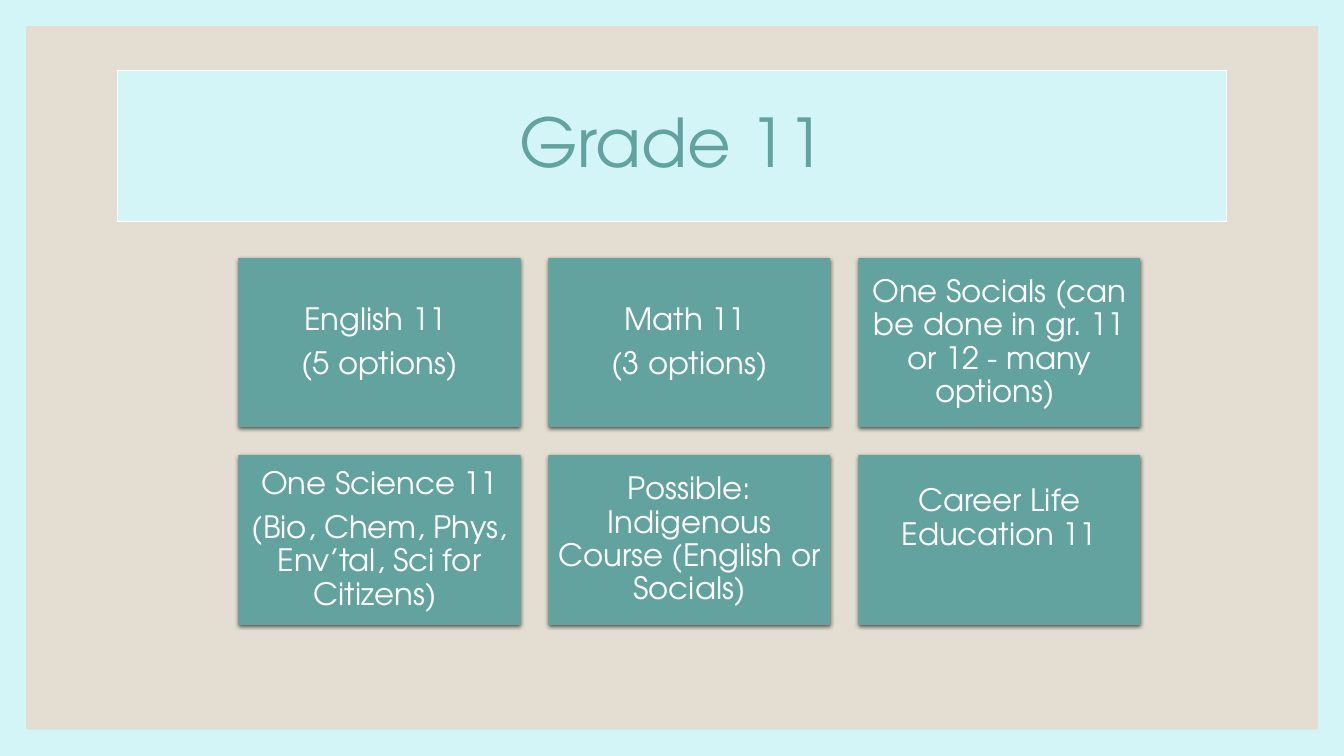
from lxml import etree
from pptx import Presentation
from pptx.dml.color import RGBColor
from pptx.enum import shapes, text
from pptx.oxml import ns
from pptx.util import Cm, Pt

FONT = "TeX Gyre Adventor"
PALE, SAND, TEAL, WHITE = "D4F5F7", "E3DED1", "62A39F", "FFFFFF"
SHADOW = f"""<a:outerShdw {ns.nsdecls('a')} blurRad="38100" dist="12700"
    dir="5400000" algn="ctr" rotWithShape="0">
  <a:srgbClr val="000000"><a:alpha val="63000"/></a:srgbClr>
</a:outerShdw>"""


def color(value):
    return RGBColor.from_string(value)


def write(shape, lines, *, size, fill, space_after=0):
    frame = shape.text_frame
    frame.word_wrap = True
    frame.vertical_anchor = text.MSO_ANCHOR.MIDDLE
    frame.text = "\n".join(lines)
    for paragraph in frame.paragraphs:
        paragraph.alignment = text.PP_ALIGN.CENTER
        paragraph.line_spacing = 0.9
        paragraph.space_before = Pt(0)
        paragraph.space_after = Pt(space_after)
        font = paragraph.runs[0].font
        font.name, font.size = FONT, Pt(size)
        font.color.rgb = color(fill)


presentation = Presentation()
presentation.slide_width, presentation.slide_height = Cm(33.87), Cm(19.05)
slide = presentation.slides.add_slide(presentation.slide_layouts[5])
slide.background.fill.solid()
slide.background.fill.fore_color.rgb = color(PALE)

# Title banner
title = slide.shapes.title
title.left, title.top, title.width, title.height = Cm(2.96), Cm(1.78), Cm(27.94), Cm(3.81)
title.fill.solid()
title.fill.fore_color.rgb = color(PALE)
title.line.color.rgb = color(WHITE)
title.line.width = Pt(0.75)
write(title, ["Grade 11"], size=48, fill=TEAL)

# Sand panel, behind the title
panel = slide.shapes.add_shape(
    shapes.MSO_SHAPE.RECTANGLE, Cm(0.66), Cm(0.66), Cm(32.56), Cm(17.73))
panel.shadow.inherit = False
panel.fill.solid()
panel.fill.fore_color.rgb = color(SAND)
panel.line.fill.background()
title.element.addprevious(panel.element)

# Course cards, three to a row
courses = [
    ["English 11 ", "(5 options)"],
    ["Math 11 ", "(3 options)"],
    ["One Socials (can be done in gr. 11 or 12 - many options) "],
    ["One Science 11", "(Bio, Chem, Phys, Env’tal, Sci for Citizens) "],
    ["Possible: Indigenous Course (English or Socials)"],
    ["Career Life Education 11"],
]
for index, lines in enumerate(courses):
    row, column = divmod(index, 3)
    card = slide.shapes.add_shape(
        shapes.MSO_SHAPE.RECTANGLE,
        Cm(6.01 + 7.81 * column), Cm(6.5 + 4.97 * row), Cm(7.11), Cm(4.27))
    card.fill.gradient()
    card.fill.gradient_angle = 270
    for stop, shade in zip(card.fill.gradient_stops, (TEAL, "60A39F")):
        stop.color.rgb = color(shade)
    card.line.fill.background()
    card.shadow.inherit = False
    effects = card.element.spPr.find(ns.qn("a:effectLst"))
    effects.append(etree.fromstring(SHADOW))

    frame = card.text_frame
    frame.margin_left = frame.margin_right = Cm(0.23)
    frame.margin_top = frame.margin_bottom = Cm(0.23)
    write(card, lines, size=22, fill=WHITE, space_after=7.7)

# The last card's text sits above the middle
card.text_frame.margin_bottom = Cm(1.3)

presentation.save("out.pptx")
